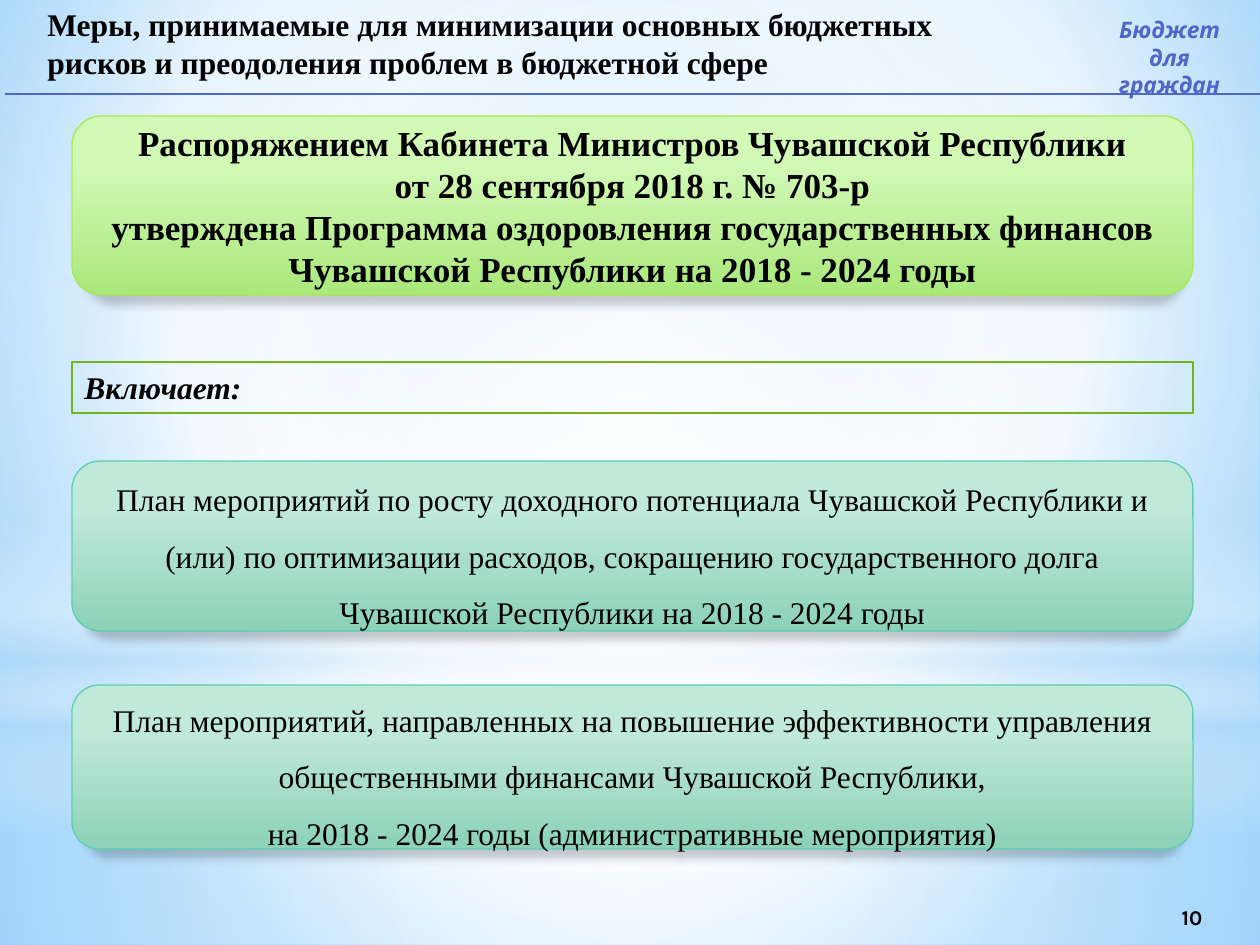
from lxml import etree
from pptx import Presentation
from pptx.dml.color import RGBColor
from pptx.enum.shapes import MSO_CONNECTOR, MSO_SHAPE
from pptx.enum.text import MSO_ANCHOR, PP_ALIGN
from pptx.oxml.ns import qn
from pptx.util import Emu, Pt

RECT, ROUND, OVAL = MSO_SHAPE.RECTANGLE, MSO_SHAPE.ROUNDED_RECTANGLE, MSO_SHAPE.OVAL
STRAIGHT = MSO_CONNECTOR.STRAIGHT
TOP, MIDDLE = MSO_ANCHOR.TOP, MSO_ANCHOR.MIDDLE
LEFT, CENTER = PP_ALIGN.LEFT, PP_ALIGN.CENTER

BLACK = RGBColor(0x00, 0x00, 0x00)
WHITE = RGBColor(0xFF, 0xFF, 0xFF)
INDIGO = RGBColor(0x4E, 0x67, 0xC8)
SKY = RGBColor(0x9E, 0xD5, 0xFF)
DEEP_SKY = RGBColor(0x5B, 0xB9, 0xFF)
HAZE = RGBColor(0xB4, 0xDC, 0xFA)
GREEN = RGBColor(0x72, 0xB4, 0x1D)
LIME_LINE = RGBColor(0xA7, 0xEA, 0x52)
LIME = [(28, RGBColor(0xD1, 0xF8, 0xB5), 100), (100, RGBColor(0xAA, 0xE8, 0x7B), 100)]
MINT_LINE = RGBColor(0x5D, 0xCE, 0xAF)
MINT = [(28, RGBColor(0xC0, 0xE9, 0xDA), 100), (100, RGBColor(0x8C, 0xD1, 0xB8), 100)]

SERIF, SANS = "Times New Roman", "Karla"


def px(n):
    return Emu(round(n * 914400 / 126))


def sub(parent, tag, **attrs):
    return etree.SubElement(parent, qn(tag), {k: str(v) for k, v in attrs.items()})


def set_gradient(fill, props, stops, center=None):
    """Stops are (position %, colour, opacity %); no center means top to bottom."""
    fill.solid()
    solid = props.find(qn("a:solidFill"))
    grad = etree.Element(qn("a:gradFill"), rotWithShape="1")
    gs_list = sub(grad, "a:gsLst")
    for pos, color, opacity in stops:
        gs = sub(gs_list, "a:gs", pos=pos * 1000)
        clr = sub(gs, "a:srgbClr", val=color)
        if opacity < 100:
            sub(clr, "a:alpha", val=opacity * 1000)
    if center:
        way = sub(grad, "a:path", path="circle")
        sub(way, "a:fillToRect", **{k: v * 1000 for k, v in zip("ltrb", center)})
    else:
        sub(grad, "a:lin", ang=5400000, scaled=0)
    props.replace(solid, grad)


def add_box(slide, kind, box):
    sp = slide.shapes.add_shape(kind, *map(px, box))
    sp.shadow.inherit = False
    sp.fill.background()
    sp.line.fill.background()
    return sp


def write(tf, lines, fmt, align=LEFT, anchor=TOP, spacing=None):
    tf.word_wrap = True
    tf.vertical_anchor = anchor
    for i, line in enumerate(lines):
        p = tf.add_paragraph() if i else tf.paragraphs[0]
        p.alignment = align
        if spacing:
            p.line_spacing = spacing
        r = p.add_run()
        r.text = line
        for name, value in fmt.items():
            if name == "color":
                r.font.color.rgb = value
            else:
                setattr(r.font, name, value)


def add_text(slide, box, lines, fmt, **layout):
    tb = slide.shapes.add_textbox(*map(px, box))
    write(tb.text_frame, lines, fmt, **layout)


def add_backdrop(slide):
    fill = slide.background.fill
    fill.solid()
    bg_props = slide._element.find(".//" + qn("p:bgPr"))
    set_gradient(fill, bg_props, [(0, SKY, 100), (60, WHITE, 100), (100, DEEP_SKY, 100)],
                 (20, 10, 20, 60))
    middle = (50, 50, 50, 50)
    glows = [
        (RECT, (0, 703, 1260, 242), [(0, WHITE, 91), (37, WHITE, 76), (100, HAZE, 79)], middle),
        (RECT, (0, 0, 1260, 703), [(0, WHITE, 89), (48, WHITE, 62), (100, HAZE, 79)], middle),
        (RECT, (0, 519, 1260, 315), [(0, WHITE, 0), (29, WHITE, 30), (45, HAZE, 40),
                                     (55, WHITE, 26), (65, HAZE, 60), (100, WHITE, 0)], None),
        (OVAL, (0, 220, 1260, 703), [(0, WHITE, 100), (56, WHITE, 0)], middle),
    ]
    for kind, box, stops, center in glows:
        sp = add_box(slide, kind, box)
        set_gradient(sp.fill, sp._element.spPr, stops, center)


def add_header(slide, box):
    x, y, w, h = box
    add_text(slide, (x + 30, y - 1, 992, 86),
             ["Меры, принимаемые для минимизации основных бюджетных "
              "рисков и преодоления проблем в бюджетной сфере"],
             dict(name=SERIF, size=Pt(18), bold=True, color=BLACK))
    rule = slide.shapes.add_connector(STRAIGHT, px(x), px(y + h), px(x + w), px(y + h))
    rule.line.color.rgb = INDIGO
    rule.line.width = Pt(0.75)
    sub(rule._element.spPr, "a:effectLst")
    add_text(slide, (x + 1080, y + 10, 169, 68), ["Бюджет", "для граждан"],
             dict(name=SANS, size=Pt(13), bold=True, italic=True, color=INDIGO), align=CENTER)


def add_card(slide, box, stops, line, lines, size, bold=False, spacing=None, margin=None):
    sp = add_box(slide, ROUND, box)
    set_gradient(sp.fill, sp._element.spPr, stops)
    sp.line.color.rgb = line
    sp.line.width = Pt(0.75)
    effects = sp._element.spPr.find(qn("a:effectLst"))
    shadow = sub(effects, "a:outerShdw", blurRad=Pt(5), dist=Pt(4), dir=5400000,
                 sx=98000, algn="ctr", rotWithShape=0)
    sub(sub(shadow, "a:srgbClr", val=BLACK), "a:alpha", val=20000)
    tf = sp.text_frame
    if margin is not None:
        for side in ("left", "top", "right", "bottom"):
            setattr(tf, "margin_" + side, margin)
    write(tf, lines, dict(name=SERIF, size=Pt(size), bold=bold, color=BLACK),
          align=CENTER, anchor=MIDDLE, spacing=spacing)


def add_measures(slide, box):
    x, y, w = box
    # Decree
    add_card(slide, (x, y, w, 179), LIME, LIME_LINE,
             ["Распоряжением Кабинета Министров Чувашской Республики",
              "от 28 сентября 2018 г. № 703-р",
              "утверждена Программа оздоровления государственных финансов "
              "Чувашской Республики на 2018 - 2024 годы"], 20, bold=True, margin=0)
    # Label above the plans
    sp = add_box(slide, RECT, (x, y + 246, w, 51))
    sp.line.color.rgb = GREEN
    sp.line.width = Pt(1.25)
    write(sp.text_frame, ["Включает:"],
          dict(name=SERIF, size=Pt(18), bold=True, italic=True, color=BLACK))
    # Plans
    plans = [
        (345, 170, ["План мероприятий по росту доходного потенциала Чувашской Республики и "
                    "(или) по оптимизации расходов, сокращению государственного долга "
                    "Чувашской Республики на 2018 - 2024 годы"]),
        (569, 164, ["План мероприятий, направленных на повышение эффективности управления "
                    "общественными финансами Чувашской Республики,",
                    "на 2018 - 2024 годы (административные мероприятия)"]),
    ]
    for dy, h, lines in plans:
        add_card(slide, (x, y + dy, w, h), MINT, MINT_LINE, lines, 18, spacing=1.5)


def main():
    prs = Presentation()
    prs.slide_width, prs.slide_height = px(1260), px(945)
    slide = prs.slides.add_slide(prs.slide_layouts[6])
    add_backdrop(slide)
    add_header(slide, (5, 0, 1260, 94))
    add_measures(slide, (72, 116, 1121))
    # Page number
    add_text(slide, (1123, 892, 138, 50), ["10"],
             dict(name=SANS, size=Pt(12), bold=True, color=BLACK), align=CENTER, anchor=MIDDLE)
    prs.save("out.pptx")


if __name__ == "__main__":
    main()
